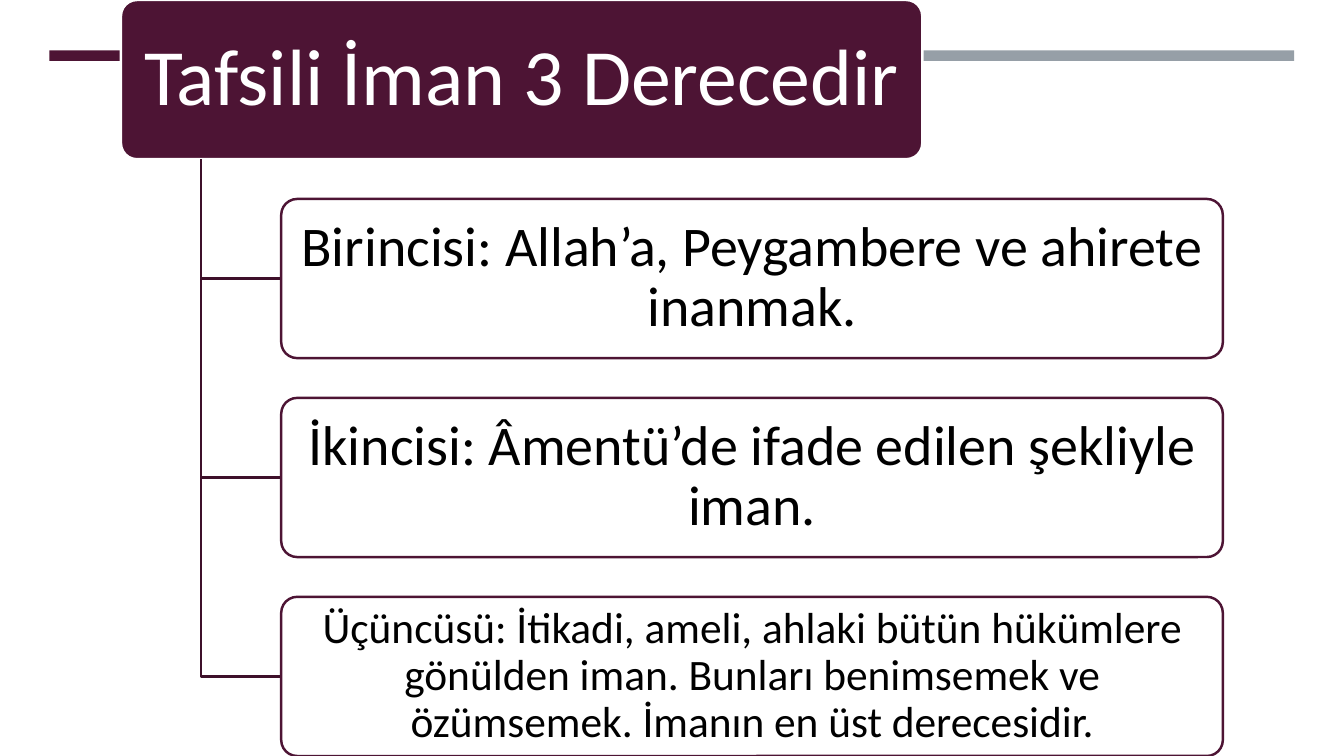
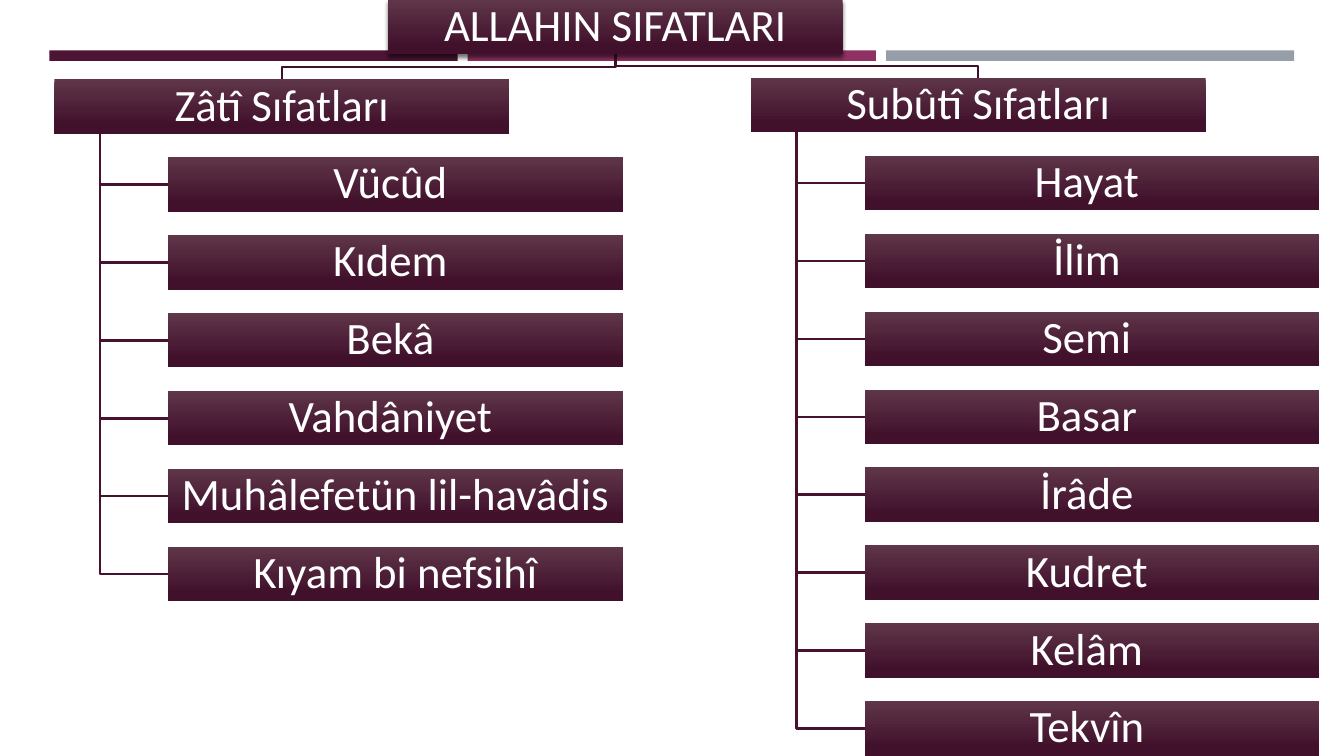
from lxml.etree import SubElement
from pptx import Presentation
from pptx.dml.color import RGBColor
from pptx.enum.shapes import MSO_SHAPE
from pptx.enum.text import MSO_ANCHOR, PP_ALIGN
from pptx.oxml.ns import qn
from pptx.util import Pt

FONT = "Calibri"
PLUM, ROSE, GREY = "4D1434", "903163", "969FA7"
DARK, WINE = "3E102A", "46122F"
LIGHT, DEEP = "5F3649", "41112C"
WHITE, BLACK = "FFFFFF", "000000"


def color(code):
    return RGBColor.from_string(code)


class Deck:
    def __init__(self):
        self.prs = Presentation()
        self.prs.slide_width, self.prs.slide_height = Pt(960), Pt(540)

    def page(self, bands):
        """Add a slide with its top bands, given as column and colour."""
        layout = self.prs.slide_layouts[6]
        self.shapes = self.prs.slides.add_slide(layout).shapes
        for col, tint in bands:
            self.box(35.3 + 298.8 * col, 36, 291.6, 7.5, fill=tint)

    def box(self, x, y, w, h, fill=None, line=None, kind=MSO_SHAPE.RECTANGLE):
        """Add a box; with no fill given it takes the plum gradient."""
        box = self.shapes.add_shape(kind, Pt(x), Pt(y), Pt(w), Pt(h))
        box.shadow.inherit = False
        if fill:
            box.fill.solid()
            box.fill.fore_color.rgb = color(fill)
        else:
            box.fill.gradient()
            box.fill.gradient_angle = 270
            stops = zip(box.fill.gradient_stops, (LIGHT, DEEP), (0, 0.84))
            for stop, tint, spot in stops:
                stop.color.rgb = color(tint)
                stop.position = spot
        if line:
            box.line.color.rgb = color(line)
            box.line.width = Pt(1.75)
        else:
            box.line.fill.background()
        return box

    def round(self, x, y, w, h, fill, line):
        box = self.box(x, y, w, h, fill, line, MSO_SHAPE.ROUNDED_RECTANGLE)
        box.adjustments[0] = 0.1
        return box

    def text(self, box, words, size, ink, pad):
        """Centre words in a box; pad is the side and top inset."""
        frame = box.text_frame
        frame.word_wrap = True
        frame.vertical_anchor = MSO_ANCHOR.MIDDLE
        frame.margin_left = frame.margin_right = Pt(pad[0])
        frame.margin_top = frame.margin_bottom = Pt(pad[1])
        frame.text = words
        para = frame.paragraphs[0]
        para.alignment = PP_ALIGN.CENTER
        para.line_spacing = 0.9
        font = para.runs[0].font
        font.name, font.size = FONT, Pt(size)
        font.color.rgb = color(ink)

    def card(self, x, y, w, h, words, size, fill, line, ink):
        """Rounded box whose insets follow the text size."""
        box = self.round(x, y, w, h, fill, line)
        self.text(box, words, size, ink, (0.15 * size, 0.1 * size))

    def tile(self, x, y, w, h, words):
        box = self.box(x, y, w, h)
        self.text(box, words, 32, WHITE, (1.6, 1.6))
        return box

    def shade(self, box):
        """Soft shadow below a box."""
        effects = box.element.spPr.find(qn("a:effectLst"))
        drop = SubElement(effects, qn("a:outerShdw"), blurRad=str(Pt(3)),
                          dist=str(Pt(2)), dir="5400000", rotWithShape="0")
        tint = SubElement(drop, qn("a:srgbClr"), val=BLACK)
        SubElement(tint, qn("a:alpha"), val="55000")

    def wire(self, tint, start, *rest):
        """Open line through the given points."""
        pen = self.shapes.build_freeform(Pt(start[0]), Pt(start[1]))
        pen.add_line_segments([(Pt(x), Pt(y)) for x, y in rest], close=False)
        wire = pen.convert_to_shape()
        wire.shadow.inherit = False
        wire.fill.background()
        wire.line.color.rgb = color(tint)
        wire.line.width = Pt(1.75)

    def elbow(self, tint, x, top, end, y):
        self.wire(tint, (x, top), (x, y), (end, y))


def degrees(deck):
    """Title box with three steps hanging from it."""
    deck.page([(0, PLUM), (2, GREY)])
    left, wide, high, step = 86.4, 572.4, 113.7, 142.1
    deck.card(left, 0, wide, high, "Tafsili İman 3 Derecedir", 57,
              PLUM, WHITE, WHITE)
    steps = [
        ("Birincisi: Allah’a, Peygambere ve ahirete inanmak.", 40),
        ("İkincisi: Âmentü’de ifade edilen şekliyle iman.", 40),
        ("Üçüncüsü: İtikadi, ameli, ahlaki bütün hükümlere gönülden iman. "
         "Bunları benimsemek ve özümsemek. İmanın en üst derecesidir.", 31),
    ]
    inner = left + 0.2 * wide
    for row, (words, size) in enumerate(steps, 1):
        top = row * step
        deck.elbow(DARK, left + 0.1 * wide, high, inner, top + high / 2)
        deck.card(inner, top, 672.6, high, words, size, WHITE, PLUM, BLACK)


def traits(deck):
    """Tree with one root and two branches."""
    deck.page([(0, PLUM), (2, GREY), (1, ROSE)])
    wide, high, step, root = 324.8, 38.9, 55.65, 277.2
    sides = [
        (38.9, 56.7, "Zâtî Sıfatları",
         ["Vücûd ", "Kıdem ", "Bekâ ", "Vahdâniyet ",
          "Muhâlefetün lil-havâdis", "Kıyam bi nefsihî"]),
        (536.4, 55.65, "Subûtî Sıfatları",
         ["Hayat ", "İlim ", "Semi ", "Basar ", "İrâde ", "Kudret ",
          "Kelâm ", "Tekvîn "]),
    ]
    for left, top, head, names in sides:
        # Line from the root to the branch head
        mid, bend = root + wide / 2, (high + top) / 2
        hub = left + wide / 2
        deck.wire(DARK, (mid, high), (mid, bend), (hub, bend), (hub, top))
        deck.tile(left, top, wide, high, head)
        # Leaves under the head
        inner = left + 0.25 * wide
        for row, name in enumerate(names, 1):
            y = top + row * step
            deck.elbow(WINE, left + 0.1 * wide, top + high, inner,
                       y + high / 2)
            deck.tile(inner, y, wide, high, name)
    deck.shade(deck.tile(root, 0, wide, high, "ALLAHIN SIFATLARI"))


def main():
    deck = Deck()
    degrees(deck)
    traits(deck)
    deck.prs.save("out.pptx")


if __name__ == "__main__":
    main()
